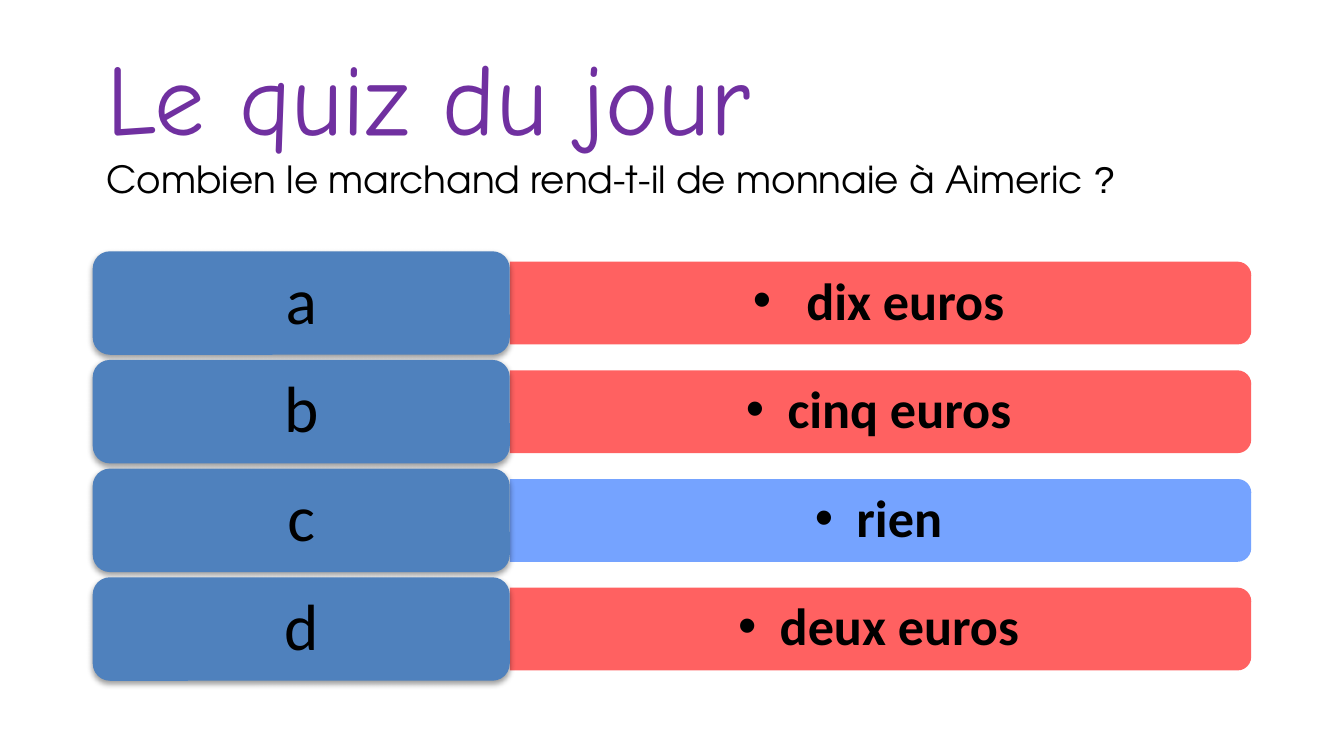
"""Build the quiz slide: a question and four lettered answers."""
from lxml.etree import SubElement
from pptx import Presentation
from pptx.dml.color import RGBColor
from pptx.enum.shapes import MSO_SHAPE as Shape
from pptx.enum.text import MSO_ANCHOR as Anchor, MSO_AUTO_SIZE as AutoSize, PP_ALIGN as Align
from pptx.oxml.ns import qn
from pptx.util import Inches, Pt

PURPLE = RGBColor(0x70, 0x30, 0xA0)
BLACK = RGBColor(0x00, 0x00, 0x00)
STEEL = RGBColor(0x4F, 0x81, 0xBD)
RED = RGBColor(0xFF, 0x50, 0x50)
BLUE = RGBColor(0x66, 0x99, 0xFF)

ANSWERS = [
    ("a", " dix euros", RED),
    ("b", "cinq euros", RED),
    ("c", "rien", BLUE),
    ("d", "deux euros", RED),
]


def write_centred(frame, text, size, bold, inset_x, inset_y):
    frame.word_wrap = True
    frame.vertical_anchor = Anchor.MIDDLE
    frame.margin_left = frame.margin_right = Inches(inset_x)
    frame.margin_top = frame.margin_bottom = Inches(inset_y)
    paragraph = frame.paragraphs[0]
    paragraph.text = text
    paragraph.alignment = Align.CENTER
    paragraph.line_spacing = 0.9
    font = paragraph.font
    font.name, font.size, font.bold = "Calibri", Pt(size), bold
    font.color.rgb = BLACK
    return paragraph


def paint(shape, colour):
    shape.shadow.inherit = False
    shape.fill.solid()
    shape.fill.fore_color.rgb = colour
    shape.line.fill.background()


deck = Presentation()
deck.slide_width = Inches(10)
deck.slide_height = int(deck.slide_width * 9 / 16)
slide = deck.slides.add_slide(deck.slide_layouts[5])

left, width = Inches(0.69), Inches(8.62)
top, tab_height = Inches(1.87), Inches(0.77)
tab_width = int(width * 0.36)
band_width = width - tab_width
band_height = int(tab_height * 0.8)
band_left = left + tab_width
row_step = int(tab_height * 1.05)

title = slide.shapes.title
title.left, title.top, title.width, title.height = left, Inches(0.2), width, Inches(1.35)
heading = title.text_frame
heading.auto_size = AutoSize.NONE
heading.word_wrap = True
heading.vertical_anchor = Anchor.MIDDLE
question = heading.paragraphs[0]
question.alignment = Align.LEFT
for text, face, size, colour in [
    ("Le quiz du jour", "Comic Neue", 54, PURPLE),
    ("Combien le marchand rend-t-il de monnaie à Aimeric ", "TeX Gyre Adventor", 20, BLACK),
    ("?", "Arial", 20, BLACK),
]:
    run = question.add_run()
    run.text = text
    run.font.name, run.font.size = face, Pt(size)
    run.font.color.rgb = colour
    if colour == PURPLE:
        question.add_line_break()

for row, (letter, answer, colour) in enumerate(ANSWERS):
    tab_top = top + row * row_step
    middle = tab_top + tab_height // 2

    band = slide.shapes.add_shape(
        Shape.ROUND_2_SAME_RECTANGLE,
        band_left + (band_width - band_height) // 2, middle - band_width // 2,
        band_height, band_width)
    band.rotation = 90
    paint(band, colour)
    tint = band.fill._xPr.find(qn("a:solidFill"))[0]
    SubElement(tint, qn("a:alpha"), val="90000")

    choice = slide.shapes.add_textbox(
        band_left, middle - Inches(0.28), band_width - Inches(0.03), Inches(0.56))
    line = write_centred(choice.text_frame, answer, 28, True, 0.12, 0.06)
    bullet = line._p.get_or_add_pPr()
    bullet.set("marL", str(Inches(0.31)))
    bullet.set("indent", str(-Inches(0.31)))
    SubElement(bullet, qn("a:buFont"), typeface="Arial")
    SubElement(bullet, qn("a:buChar"), char="•")
    bullet.append(bullet.find(qn("a:defRPr")))

    tab = slide.shapes.add_shape(
        Shape.ROUNDED_RECTANGLE, left, tab_top, tab_width, tab_height)
    paint(tab, STEEL)
    effects = tab._element.spPr.find(qn("a:effectLst"))
    shadow = SubElement(effects, qn("a:outerShdw"), blurRad="40000", dist="20000",
                        dir="5400000", rotWithShape="0")
    shade = SubElement(shadow, qn("a:srgbClr"), val=str(BLACK))
    SubElement(shade, qn("a:alpha"), val="38000")
    write_centred(tab.text_frame, letter, 35, False, 0.15, 0.07)

deck.save("out.pptx")
